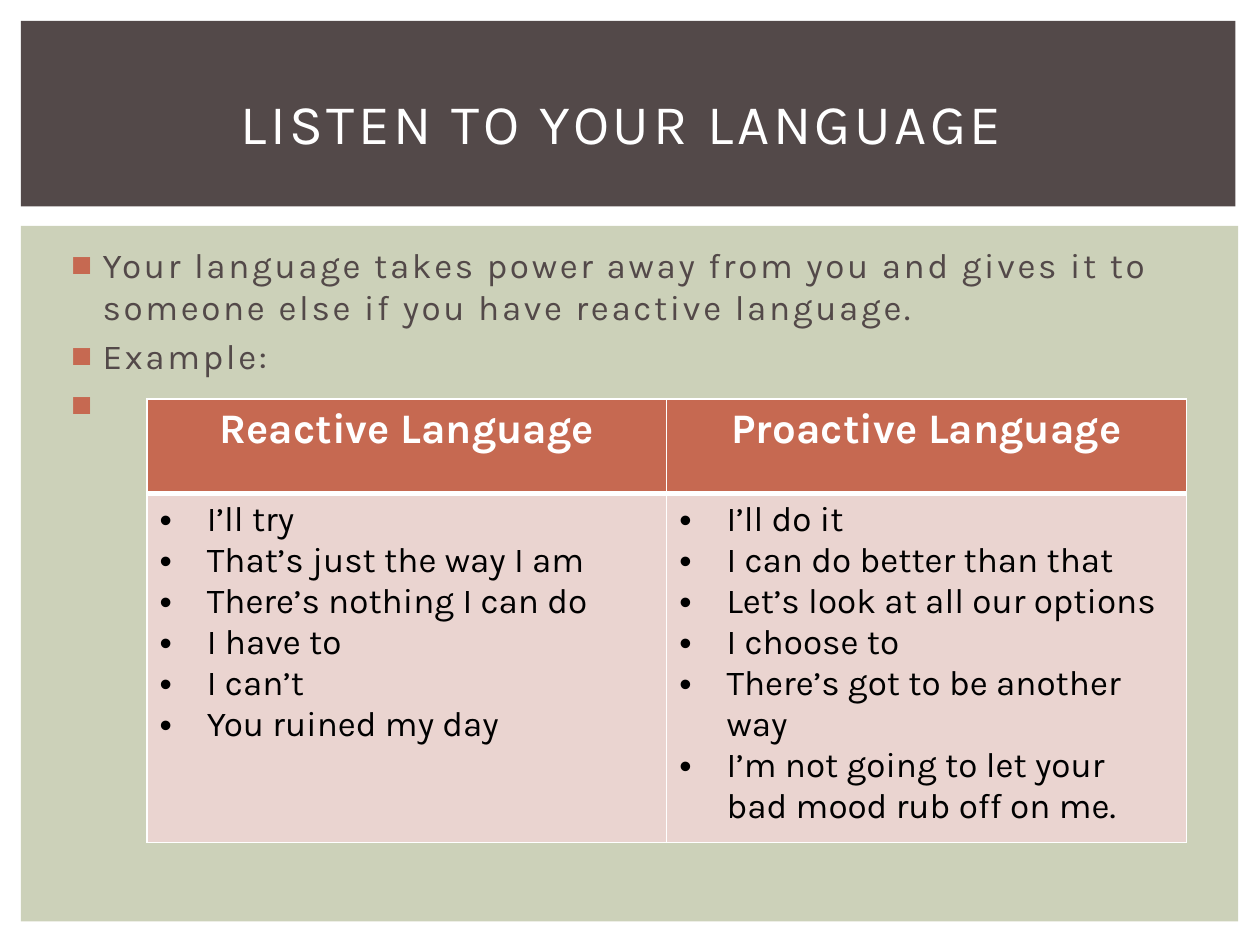
from dataclasses import dataclass

from lxml.etree import SubElement
from pptx import Presentation
from pptx.dml.color import RGBColor
from pptx.enum.shapes import MSO_SHAPE
from pptx.enum.text import MSO_ANCHOR, PP_ALIGN
from pptx.oxml.ns import qn
from pptx.util import Pt


@dataclass(frozen=True)
class Theme:
    font: str = "Karla"
    white: str = "FFFFFF"
    black: str = "000000"
    brown: str = "534949"
    sage: str = "CCD1B9"
    rust: str = "C66951"
    blush: str = "EAD4D0"
    title_size: int = 32
    header_size: int = 24
    body_size: int = 20


THEME = Theme()

TITLE = "LISTEN TO YOUR LANGUAGE "
POINTS = [
    "Your language takes power away from you and gives it to someone else "
    "if you have reactive language.",
    "Example:",
    " ",
]
PHRASES = {
    "Reactive Language": [
        "I’ll try",
        "That’s just the way I am",
        "There’s nothing I can do",
        "I have to",
        "I can’t",
        "You ruined my day",
    ],
    "Proactive Language": [
        "I’ll do it",
        "I can do better than that",
        "Let’s look at all our options",
        "I choose to",
        "There’s got to be another way",
        "I’m not going to let your bad mood rub off on me.",
    ],
}


def rgb(color):
    return RGBColor.from_string(color)


def add_bullet(paragraph, char, color, left, hanging):
    props = paragraph._p.get_or_add_pPr()
    props.set("marL", str(Pt(left)))
    props.set("indent", str(-Pt(hanging)))
    SubElement(SubElement(props, qn("a:buClr")), qn("a:srgbClr")).set("val", color)
    SubElement(props, qn("a:buFont")).set("typeface", "Arial")
    SubElement(props, qn("a:buChar")).set("char", char)


def write_text(frame, lines, *, size, color, bold=False, align=PP_ALIGN.LEFT,
               tracking=0, space_before=0, bullet=None):
    frame.word_wrap = True
    for index, line in enumerate(lines):
        paragraph = frame.add_paragraph() if index else frame.paragraphs[0]
        paragraph.alignment = align
        paragraph.space_before = Pt(space_before)
        if bullet:
            add_bullet(paragraph, **bullet)
        run = paragraph.add_run()
        run.text = line
        run.font.name = THEME.font
        run.font.size = Pt(size)
        run.font.bold = bold
        run.font.color.rgb = rgb(color)
        if tracking:
            run.font._element.set("spc", str(int(tracking * 100)))


def add_panel(slide, left, top, width, height, color):
    panel = slide.shapes.add_shape(
        MSO_SHAPE.RECTANGLE, Pt(left), Pt(top), Pt(width), Pt(height))
    panel.shadow.inherit = False
    panel.fill.solid()
    panel.fill.fore_color.rgb = rgb(color)
    panel.line.fill.background()


def add_text(slide, left, top, width, height, lines, anchor=MSO_ANCHOR.TOP, **style):
    box = slide.shapes.add_textbox(Pt(left), Pt(top), Pt(width), Pt(height))
    box.text_frame.vertical_anchor = anchor
    write_text(box.text_frame, lines, **style)


def style_cell(cell, fill, borders):
    props = cell._tc.get_or_add_tcPr()
    for side, width in zip("LRTB", borders):
        line = SubElement(props, qn(f"a:ln{side}"), w=str(Pt(width)))
        SubElement(SubElement(line, qn("a:solidFill")),
                   qn("a:srgbClr")).set("val", THEME.white)
    cell.fill.solid()
    cell.fill.fore_color.rgb = rgb(fill)


def add_phrase_table(slide, left, top, width, row_heights, phrases):
    table = slide.shapes.add_table(
        len(row_heights), len(phrases), Pt(left), Pt(top), Pt(width),
        Pt(sum(row_heights))).table
    for row, height in zip(table.rows, row_heights):
        row.height = Pt(height)
    dot = dict(char="•", color=THEME.black, left=27, hanging=27)
    for column, (heading, examples) in enumerate(phrases.items()):
        table.columns[column].width = Pt(width / len(phrases))
        header, body = table.cell(0, column), table.cell(1, column)
        style_cell(header, THEME.rust, (1, 1, 1, 3))
        style_cell(body, THEME.blush, (1, 1, 3, 1))
        write_text(header.text_frame, [heading], size=THEME.header_size,
                   color=THEME.white, bold=True, align=PP_ALIGN.CENTER)
        write_text(body.text_frame, examples, size=THEME.body_size,
                   color=THEME.black, bullet=dot)


def main():
    deck = Presentation()
    deck.slide_width, deck.slide_height = Pt(720), Pt(540)
    slide = deck.slides.add_slide(deck.slide_layouts[6])

    add_panel(slide, 12, 129, 695.5, 397.5, THEME.sage)
    add_panel(slide, 12, 12, 694, 106, THEME.brown)
    add_text(slide, 30, 135.5, 662, 347, POINTS, size=THEME.body_size,
             color=THEME.brown, tracking=1.5, space_before=4,
             bullet=dict(char="■", color=THEME.rust, left=21.6, hanging=18))
    add_text(slide, 30, 28, 660, 83, [TITLE], anchor=MSO_ANCHOR.MIDDLE,
             size=THEME.title_size, color=THEME.white, tracking=2,
             align=PP_ALIGN.CENTER)
    add_phrase_table(slide, 84, 228, 594, (54, 136), PHRASES)

    deck.save("out.pptx")


if __name__ == "__main__":
    main()
